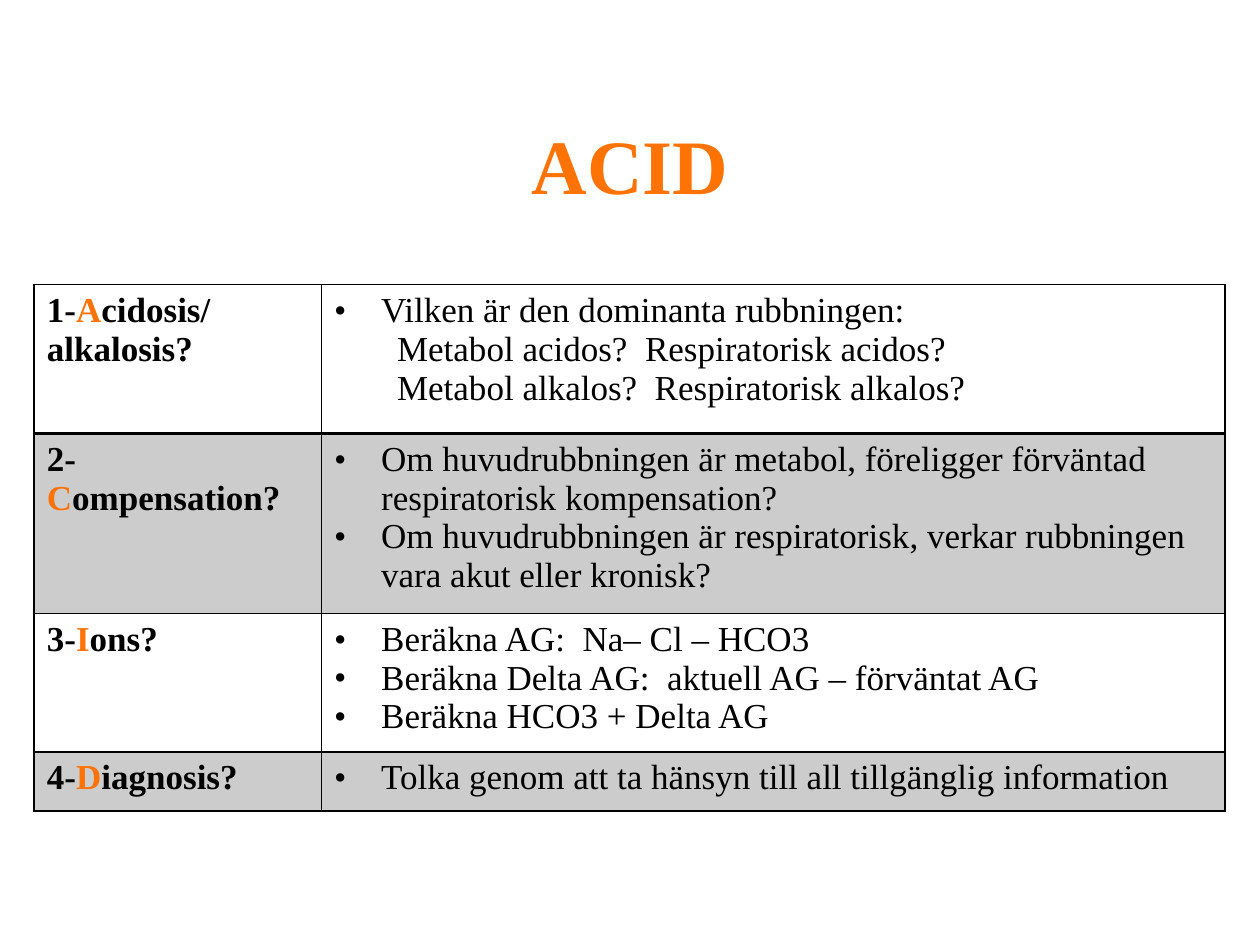
from lxml.etree import SubElement
from pptx import Presentation
from pptx.dml.color import RGBColor
from pptx.enum.text import MSO_ANCHOR, PP_ALIGN
from pptx.oxml.ns import qn
from pptx.util import Cm, Pt

FONT = "Times New Roman"
BLACK = "000000"
ORANGE = "FF7305"
COLUMN_WIDTHS = [5.79, 18.21]
ROW_HEIGHTS = [3.0, 3.63, 2.79, 1.19]
STEPS = [
    (("1-", "A", "cidosis/alkalosis?"),
     ["Vilken är den dominanta rubbningen:"],
     ["Metabol acidos?  Respiratorisk acidos?",
      "Metabol alkalos?  Respiratorisk alkalos?"]),
    (("2-", "C", "ompensation?"),
     ["Om huvudrubbningen är metabol, föreligger förväntad respiratorisk kompensation?",
      "Om huvudrubbningen är respiratorisk, verkar rubbningen vara akut eller kronisk?"],
     []),
    (("3-", "I", "ons?"),
     ["Beräkna AG:  Na– Cl – HCO3",
      "Beräkna Delta AG:  aktuell AG – förväntat AG",
      "Beräkna HCO3 + Delta AG"],
     []),
    (("4-", "D", "iagnosis?"),
     ["Tolka genom att ta hänsyn till all tillgänglig information"],
     []),
]


def color(hex_value):
    """Return the colour for a hex string."""
    return RGBColor.from_string(hex_value)


def format_run(run, size, hex_value=BLACK, bold=False):
    """Set the font of a run."""
    run.font.name = FONT
    run.font.size = Pt(size)
    run.font.bold = bold
    run.font.color.rgb = color(hex_value)


def add_title(slide, text):
    """Place and format the slide title."""
    title = slide.shapes.title
    title.left, title.top = Cm(1.9), Cm(1.7)
    title.width, title.height = Cm(21.6), Cm(3.18)
    title.text_frame.text = text
    title.text_frame.vertical_anchor = MSO_ANCHOR.MIDDLE
    paragraph = title.text_frame.paragraphs[0]
    paragraph.alignment = PP_ALIGN.CENTER
    format_run(paragraph.runs[0], 44, ORANGE, True)


def set_borders(cell, top, bottom):
    """Draw black lines around a cell."""
    properties = cell._tc.get_or_add_tcPr()
    for side, width in (("L", 1), ("R", 1), ("T", top), ("B", bottom)):
        line = SubElement(properties, qn(f"a:ln{side}"), w=str(Pt(width)))
        fill = SubElement(line, qn("a:solidFill"))
        SubElement(fill, qn("a:srgbClr"), val=BLACK)


def set_fill(cell, shaded):
    """Give a cell a translucent black fill or none."""
    if not shaded:
        cell.fill.background()
        return
    cell.fill.solid()
    cell.fill.fore_color.rgb = color(BLACK)
    tint = cell._tc.tcPr.find(f"{qn('a:solidFill')}/{qn('a:srgbClr')}")
    SubElement(tint, qn("a:alpha"), val="20000")


def write_heading(cell, parts):
    """Write a step name with its initial highlighted."""
    paragraph = cell.text_frame.paragraphs[0]
    for text, hex_value in zip(parts, (BLACK, ORANGE, BLACK)):
        run = paragraph.add_run()
        run.text = text
        format_run(run, 20, hex_value, True)


def indent(paragraph, margin, first_line, bullet=None):
    """Set the indents and the bullet of a paragraph."""
    properties = paragraph._p.get_or_add_pPr()
    properties.set("marL", str(Cm(margin)))
    properties.set("indent", str(Cm(first_line)))
    if bullet:
        SubElement(properties, qn("a:buFont"), typeface=FONT)
        SubElement(properties, qn("a:buChar"), char=bullet)
    else:
        SubElement(properties, qn("a:buNone"))


def write_questions(cell, bullets, details):
    """Write bulleted lines followed by indented detail lines."""
    cell.text_frame.text = "\n".join(bullets + details)
    for index, paragraph in enumerate(cell.text_frame.paragraphs):
        if index < len(bullets):
            indent(paragraph, 0.95, -0.95, "•")
        else:
            paragraph.level = 1
            indent(paragraph, 1.27, 0)
        format_run(paragraph.runs[0], 20)


def add_steps_table(slide):
    """Add the table of the four steps."""
    frame = slide.shapes.add_table(
        len(STEPS), len(COLUMN_WIDTHS), Cm(0.69), Cm(5.74),
        Cm(sum(COLUMN_WIDTHS)), Cm(sum(ROW_HEIGHTS)))
    table = frame.table
    table.first_row = table.horz_banding = False
    for column, width in zip(table.columns, COLUMN_WIDTHS):
        column.width = Cm(width)
    for index, (heading, bullets, details) in enumerate(STEPS):
        row = table.rows[index]
        row.height = Cm(ROW_HEIGHTS[index])
        for cell in row.cells:
            set_borders(cell, 2 if index == 1 else 1, 2 if index == 0 else 1)
            set_fill(cell, index % 2 == 1)
        write_heading(row.cells[0], heading)
        write_questions(row.cells[1], bullets, details)


def main():
    """Build and save the presentation."""
    presentation = Presentation()
    presentation.slide_width, presentation.slide_height = Cm(25.4), Cm(19.05)
    slide = presentation.slides.add_slide(presentation.slide_layouts[5])
    add_title(slide, "ACID")
    add_steps_table(slide)
    presentation.save("out.pptx")


if __name__ == "__main__":
    main()
